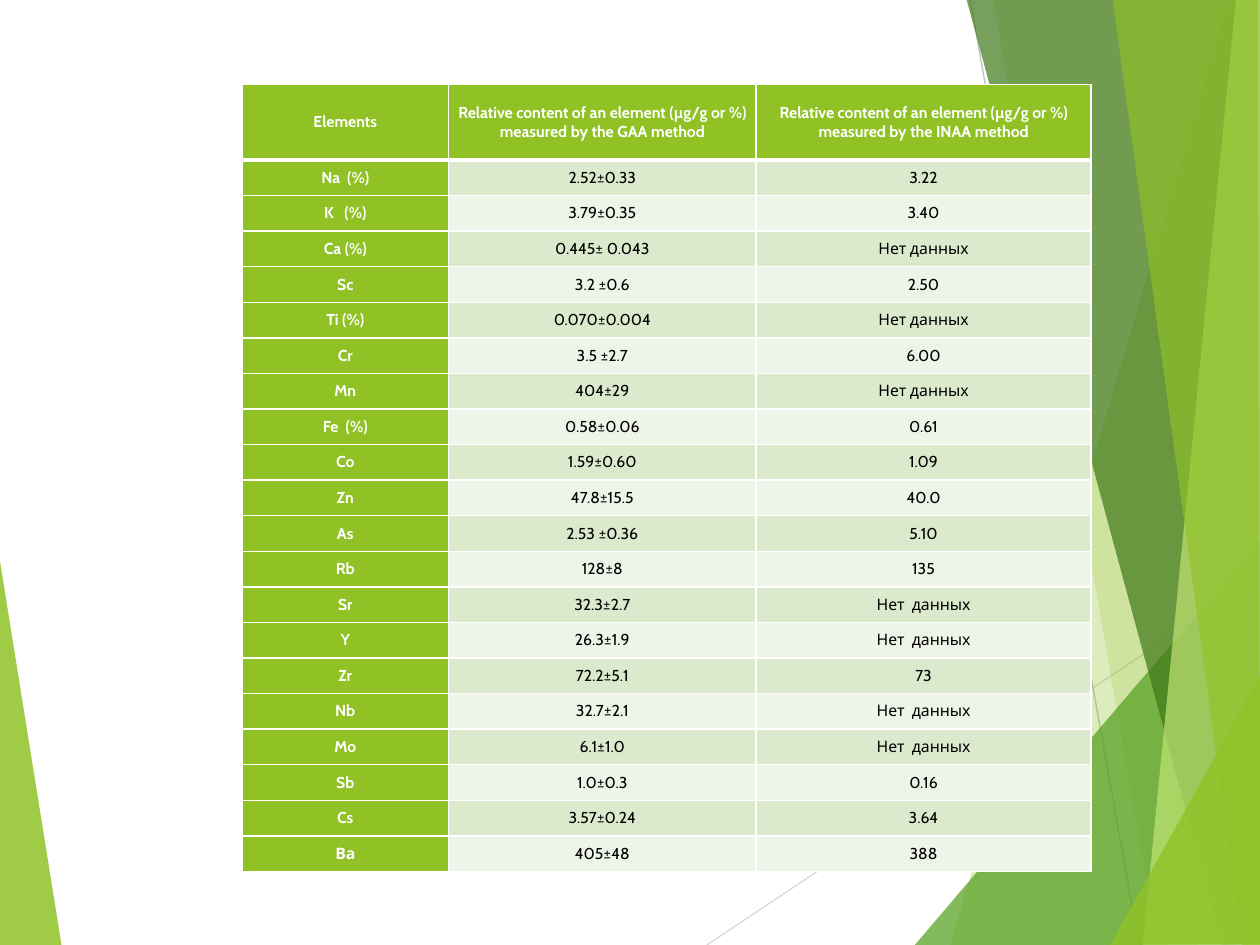
from lxml import etree
from pptx import Presentation
from pptx.dml.color import RGBColor
from pptx.enum import shapes, text
from pptx.oxml import ns
from pptx.util import Inches, Pt

LIME = RGBColor(0x90, 0xC2, 0x26)
GREEN = RGBColor(0x54, 0xA0, 0x21)
DARK_GREEN = RGBColor(0x3F, 0x78, 0x19)
PALE_LIME = RGBColor(0xC0, 0xE4, 0x74)
BANDS = (RGBColor(0xDB, 0xE9, 0xCD), RGBColor(0xEE, 0xF4, 0xE8))
LIGHT_GREY = RGBColor(0xD9, 0xD9, 0xD9)
GREY = RGBColor(0xBF, 0xBF, 0xBF)
WHITE = RGBColor(0xFF, 0xFF, 0xFF)
BLACK = RGBColor(0, 0, 0)
FONT = "Cabin"

HEADER = (
    "Elements",
    "Relative content of an element (µg/g or %) measured by the GAA method",
    "Relative content of an element (µg/g or %) measured by the INAA method",
)
ELEMENTS = [
    ("Na  (%)", "2.52±0.33", "3.22"),
    ("K   (%)", "3.79±0.35", "3.40"),
    ("Ca (%)", "0.445± 0.043", "Нет данных"),
    ("Sc", "3.2 ±0.6", "2.50"),
    ("Ti (%)", "0.070±0.004", "Нет данных"),
    ("Cr", "3.5 ±2.7", "6.00"),
    ("Mn", "404±29", "Нет данных"),
    ("Fe  (%)", "0.58±0.06", "0.61"),
    ("Co", "1.59±0.60", "1.09"),
    ("Zn", "47.8±15.5", "40.0"),
    ("As", "2.53 ±0.36", "5.10"),
    ("Rb", "128±8", "135"),
    ("Sr", "32.3±2.7", "Нет  данных"),
    ("Y", "26.3±1.9", "Нет  данных"),
    ("Zr", "72.2±5.1", "73"),
    ("Nb", "32.7±2.1", "Нет  данных"),
    ("Mo", "6.1±1.0", "Нет  данных"),
    ("Sb", "1.0±0.3", "0.16"),
    ("Cs", "3.57±0.24", "3.64"),
    ("Ва", "405±48", "388"),
]
COLUMN_WIDTHS = (1.64, 2.44, 2.66)
TABLE_LEFT, TABLE_TOP, TABLE_HEIGHT, HEADER_HEIGHT = 1.92, 0.67, 6.25, 0.6

# Backdrop: (fill, opacity in %, corners) and (colour, from, to)
LEFT_WEDGE = (LIME, 85, [(-0.01, 4.39), (0.49, 7.51), (-0.01, 7.5)])
THIN_LINES = [
    (LIGHT_GREY, (5.61, 7.5), (10.01, 4.57)),
    (GREY, (7.7, 0), (9.04, 7.5)),
]
RIGHT_FACETS = [
    (LIME, 30, [(9.75, 0), (7.54, 7.5), (10.02, 7.51), (10.01, 0.01)]),
    (LIME, 20, [(7.88, -0.01), (9.19, 7.5), (10.01, 7.5), (10.01, -0.01)]),
    (GREEN, 72, [(7.26, 7.5), (10, 4.29), (10.01, 7.5)]),
    (DARK_GREEN, 70, [(7.67, -0.01), (9.7, 7.5), (10.01, 7.49), (10.01, -0.01)]),
    (PALE_LIME, 70, [(9.81, -0.01), (9.07, 7.5), (10.01, 7.5), (10, -0.01)]),
    (LIME, 65, [(8.83, -0.01), (9.86, 7.5), (10, 7.5), (9.98, -0.01)]),
    (LIME, 80, [(8.81, 7.5), (10.01, 5.35), (10.01, 7.49)]),
]


def add_facet(slide, color, opacity, corners):
    points = [(Inches(x), Inches(y)) for x, y in corners]
    builder = slide.shapes.build_freeform(*points[0])
    builder.add_line_segments(points[1:], close=True)
    facet = builder.convert_to_shape()
    facet.shadow.inherit = False
    facet.line.fill.background()
    facet.fill.solid()
    facet.fill.fore_color.rgb = color
    srgb = facet.fill._xPr.find(".//" + ns.qn("a:srgbClr"))
    etree.SubElement(srgb, ns.qn("a:alpha"), val=str(opacity * 1000))


def add_thin_line(slide, color, start, end):
    ends = [Inches(v) for v in (*start, *end)]
    line = slide.shapes.add_connector(shapes.MSO_CONNECTOR.STRAIGHT, *ends)
    line.line.color.rgb = color
    line.line.width = Pt(0.75)
    etree.SubElement(line._element.spPr, ns.qn("a:effectLst"))


def set_borders(cell, top, bottom):
    properties = cell._tc.get_or_add_tcPr()
    widths = {"lnL": 1, "lnR": 1, "lnT": top, "lnB": bottom}
    for position, (side, width) in enumerate(widths.items()):
        border = etree.Element(ns.qn("a:" + side), w=str(Pt(width)))
        fill = etree.SubElement(border, ns.qn("a:solidFill"))
        etree.SubElement(fill, ns.qn("a:srgbClr"), val=str(WHITE))
        properties.insert(position, border)


def fill_cell(cell, content, row, column):
    is_heading = row == 0 or column == 0
    cell.text = content
    cell.vertical_anchor = text.MSO_ANCHOR.MIDDLE
    cell.margin_left = cell.margin_right = Inches(0.07)
    cell.margin_top = cell.margin_bottom = 0
    cell.fill.solid()
    cell.fill.fore_color.rgb = LIME if is_heading else BANDS[(row - 1) % 2]
    paragraph = cell.text_frame.paragraphs[0]
    paragraph.alignment = text.PP_ALIGN.CENTER
    paragraph.font.name = FONT
    paragraph.font.size = Pt(9)
    paragraph.font.bold = is_heading
    paragraph.font.color.rgb = WHITE if is_heading else BLACK
    set_borders(cell, top=3 if row == 1 else 1, bottom=3 if row == 0 else 1)


def add_element_table(slide):
    rows = [HEADER, *ELEMENTS]
    table = slide.shapes.add_table(
        len(rows), len(HEADER), Inches(TABLE_LEFT), Inches(TABLE_TOP),
        Inches(sum(COLUMN_WIDTHS)), Inches(TABLE_HEIGHT)).table
    table.first_col = True
    for column, width in zip(table.columns, COLUMN_WIDTHS):
        column.width = Inches(width)
    body_height = (TABLE_HEIGHT - HEADER_HEIGHT) / len(ELEMENTS)
    for r, contents in enumerate(rows):
        table.rows[r].height = Inches(body_height if r else HEADER_HEIGHT)
        for c, content in enumerate(contents):
            fill_cell(table.cell(r, c), content, r, c)


def main():
    deck = Presentation()
    deck.slide_width, deck.slide_height = Inches(10), Inches(7.5)
    slide = deck.slides.add_slide(deck.slide_layouts[6])

    # Backdrop, back to front
    add_facet(slide, *LEFT_WEDGE)
    for line in THIN_LINES:
        add_thin_line(slide, *line)
    for facet in RIGHT_FACETS:
        add_facet(slide, *facet)

    # Measured contents
    add_element_table(slide)
    deck.save("out.pptx")


if __name__ == "__main__":
    main()
